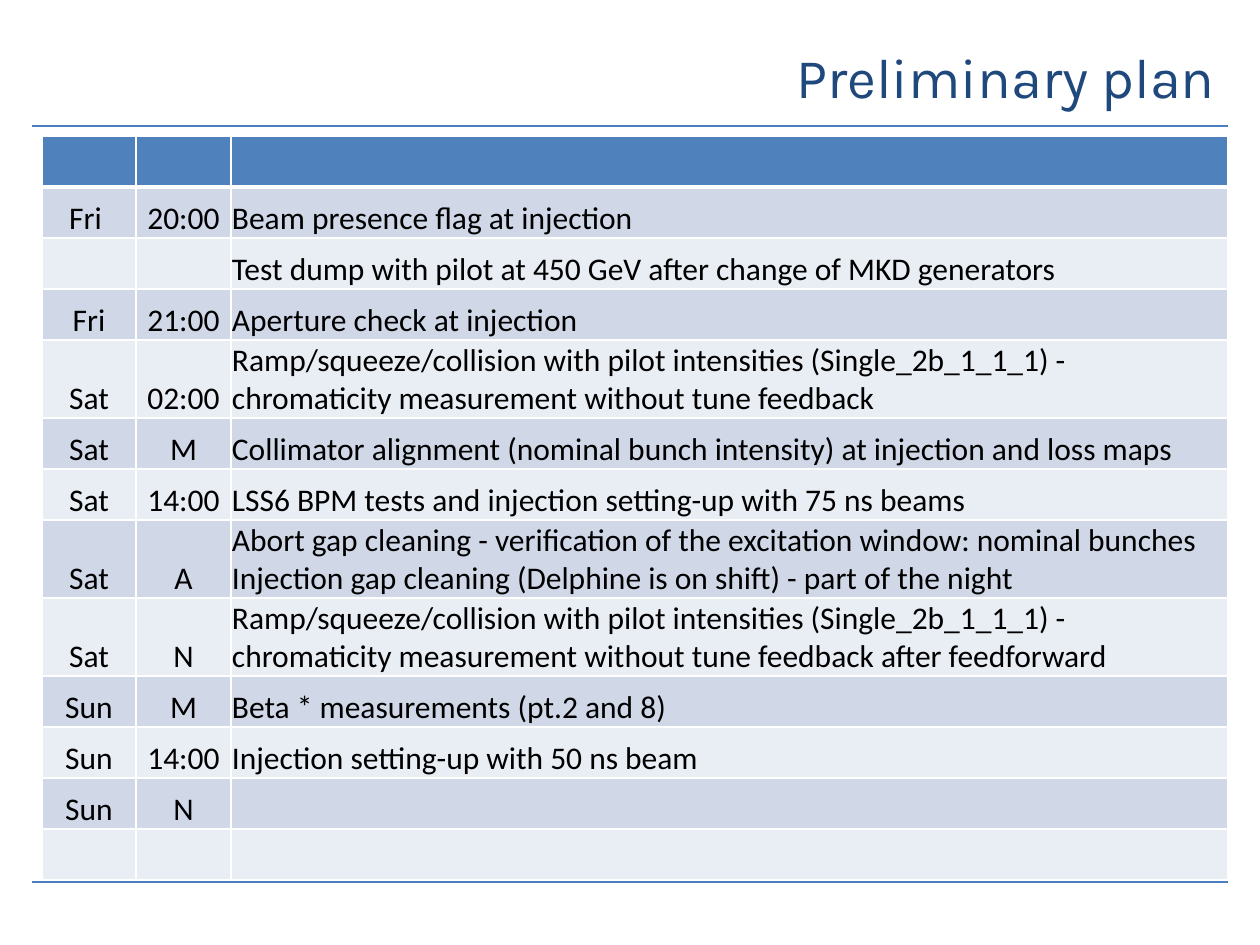
import pptx
import pptx.util
import pptx.dml.color
import pptx.enum.shapes
import pptx.enum.text
import pptx.oxml.ns
from lxml import etree

# Content
TITLE = "Preliminary plan"
RAMP = ("Ramp/squeeze/collision with pilot intensities (Single_2b_1_1_1) - "
        "chromaticity measurement without tune feedback")
ROWS = [
    ("", "", ""),
    ("Fri ", "20:00", "Beam presence flag at injection"),
    ("", "", "Test dump with pilot at 450 GeV after change of MKD generators"),
    ("Fri", "21:00", "Aperture check at injection"),
    ("Sat", "02:00", RAMP),
    ("Sat", "M", "Collimator alignment (nominal bunch intensity) at injection and loss maps"),
    ("Sat", "14:00", "LSS6 BPM tests and injection setting-up with 75 ns beams"),
    ("Sat", "A", "Abort gap cleaning - verification of the excitation window: nominal bunches\n"
                 "Injection gap cleaning (Delphine is on shift) - part of the night"),
    ("Sat", "N", RAMP + " after feedforward"),
    ("Sun", "M", "Beta * measurements (pt.2 and 8)"),
    ("Sun", "14:00", "Injection setting-up with 50 ns beam"),
    ("Sun", "N", ""),
    ("", "", ""),
]
COLORS = {"title": "1F497D", "rule": "4B7EBC", "header": "4F81BD", "odd": "D0D8E8",
          "even": "E9EDF4", "border": "FFFFFF", "text": "000000"}
COLUMNS = (94, 95, 997)
ROW_HEIGHT = 51
RULES_Y = (126, 882)

PP_ALIGN = pptx.enum.text.PP_ALIGN
ANCHOR = pptx.enum.text.MSO_ANCHOR


def px(n):
    return pptx.util.Emu(round(n * 914400 / 126))


def rgb(name):
    return pptx.dml.color.RGBColor.from_string(COLORS[name])


def style(p, font, size, color, align):
    p.alignment = align
    for r in p.runs:
        r.font.name = font
        r.font.size = pptx.util.Pt(size)
        r.font.color.rgb = rgb(color)


def set_borders(cell, widths):
    tc_pr = cell._tc.get_or_add_tcPr()
    qn = pptx.oxml.ns.qn
    for i, (side, width) in enumerate(widths.items()):
        ln = etree.Element(qn("a:ln" + side), w=str(pptx.util.Pt(width)))
        fill = etree.SubElement(ln, qn("a:solidFill"))
        etree.SubElement(fill, qn("a:srgbClr"), val=COLORS["border"])
        tc_pr.insert(i, ln)


prs = pptx.Presentation()
prs.slide_width, prs.slide_height = px(1260), px(945)
s = prs.slides.add_slide(prs.slide_layouts[5])

# Title
title = s.shapes.title
title.left, title.top, title.width, title.height = px(220), px(21), px(1008), px(110)
title.text_frame.text = TITLE
title.text_frame.vertical_anchor = ANCHOR.MIDDLE
style(title.text_frame.paragraphs[0], "Karla", 32, "title", PP_ALIGN.RIGHT)

# Rules above and below the plan
for y in RULES_Y:
    rule = s.shapes.add_connector(pptx.enum.shapes.MSO_CONNECTOR.STRAIGHT,
                                  px(32), px(y), px(1228), px(y))
    rule.line.color.rgb = rgb("rule")
    rule.line.width = pptx.util.Pt(1.5)
    etree.SubElement(rule._element.spPr, pptx.oxml.ns.qn("a:effectLst"))

# Plan table: two-line rows grow with their text
frame = s.shapes.add_table(len(ROWS), len(COLUMNS), px(42), px(136),
                           px(sum(COLUMNS)), px(ROW_HEIGHT * len(ROWS)))
table = frame.table
for column, width in zip(table.columns, COLUMNS):
    column.width = px(width)
for i, row in enumerate(ROWS):
    table.rows[i].height = px(ROW_HEIGHT)
    band = "header" if i == 0 else "odd" if i % 2 else "even"
    for j, text in enumerate(row):
        cell = table.cell(i, j)
        cell.fill.solid()
        cell.fill.fore_color.rgb = rgb(band)
        set_borders(cell, {"L": 1, "R": 1, "T": 3 if i == 1 else 1, "B": 3 if i == 0 else 1})
        if not text:
            continue
        cell.margin_left = cell.margin_right = cell.margin_top = px(1)
        cell.margin_bottom = 0
        cell.vertical_anchor = ANCHOR.BOTTOM
        cell.text_frame.text = text
        for p in cell.text_frame.paragraphs:
            style(p, "Calibri", 18, "text", PP_ALIGN.LEFT if j == 2 else PP_ALIGN.CENTER)

prs.save("out.pptx")
